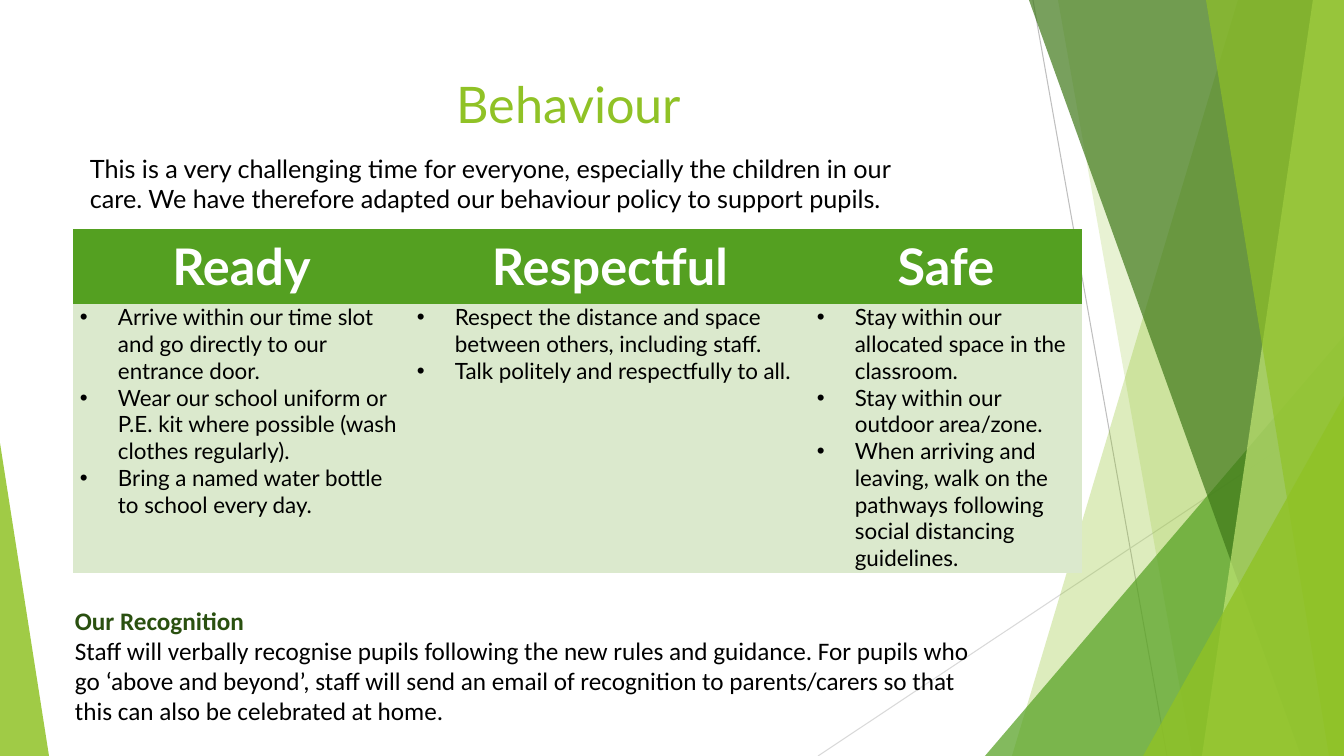
import lxml.etree
import pptx
import pptx.dml.color
import pptx.enum.shapes
import pptx.enum.text
import pptx.oxml.ns
import pptx.util

RGBColor = pptx.dml.color.RGBColor
ALIGN = pptx.enum.text.PP_ALIGN
ANCHOR = pptx.enum.text.MSO_ANCHOR
qn = pptx.oxml.ns.qn

SCALE = 914400 / 100.8
WIDTH, HEIGHT = 1344, 756
LIME = RGBColor(0x90, 0xC2, 0x26)
GREEN = RGBColor(0x54, 0xA0, 0x21)
FOREST = RGBColor(0x3F, 0x78, 0x19)
PALE_LIME = RGBColor(0xC0, 0xE4, 0x74)
DARK_GREEN = RGBColor(0x2A, 0x50, 0x10)
PALE_GREEN = RGBColor(0xDB, 0xE9, 0xCD)
GREY = RGBColor(0xBF, 0xBF, 0xBF)
LIGHT_GREY = RGBColor(0xD9, 0xD9, 0xD9)
BLACK = RGBColor(0, 0, 0)
WHITE = RGBColor(0xFF, 0xFF, 0xFF)
NO_STYLE_NO_GRID = "{2D5ABB26-0587-4C30-8999-92F81FD0307C}"

RULES = [
    ("Ready", 337, [
        "Arrive within our time slot and go directly to our entrance door.",
        "Wear our school uniform or P.E. kit where possible (wash clothes regularly).",
        "Bring a named water bottle to school every day."]),
    ("Respectful", 400, [
        "Respect the distance and space between others, including staff.",
        "Talk politely and respectfully to all."]),
    ("Safe", 272, [
        "Stay within our allocated space in the classroom.",
        "Stay within our outdoor area/zone.",
        "When arriving and leaving, walk on the pathways following social distancing guidelines."]),
]


def px(length):
    """Turn a length in px into EMU."""
    return pptx.util.Emu(round(length * SCALE))


def paint(facet, color, opacity):
    """Give a facet a translucent fill without line or shadow."""
    facet.shadow.inherit = False
    facet.line.fill.background()
    facet.fill.solid()
    facet.fill.fore_color.rgb = color
    tint = facet._element.spPr.find(qn("a:solidFill"))[0]
    lxml.etree.SubElement(tint, qn("a:alpha"), val=str(opacity * 1000))


def add_hairline(slide, start, end, color):
    """Draw a thin straight line."""
    hairline = slide.shapes.add_connector(
        pptx.enum.shapes.MSO_CONNECTOR.STRAIGHT, *map(px, start + end))
    hairline.line.color.rgb = color
    hairline.line.width = pptx.util.Pt(0.75)
    lxml.etree.SubElement(hairline._element.spPr, qn("a:effectLst"))


def add_band(slide, top_x, bottom_x, color, opacity):
    """Draw a full-height band from a slanted edge to the right of the slide."""
    outline = slide.shapes.build_freeform(top_x, 0, scale=SCALE)
    outline.add_line_segments([(WIDTH, 0), (WIDTH, HEIGHT), (bottom_x, HEIGHT)])
    paint(outline.convert_to_shape(), color, opacity)


def add_corner(slide, left, top, width, apex, color, opacity):
    """Draw a triangle that stands on the bottom edge of the slide."""
    corner = slide.shapes.add_shape(
        pptx.enum.shapes.MSO_SHAPE.ISOSCELES_TRIANGLE,
        px(left), px(top), px(width), px(HEIGHT - top))
    corner.adjustments[0] = apex
    paint(corner, color, opacity)


def add_backdrop(slide):
    """Draw the green facets from back to front."""
    add_hairline(slide, (1033, 0), (1167, HEIGHT), GREY)
    add_hairline(slide, (WIDTH, 406), (818, HEIGHT), LIGHT_GREY)
    add_band(slide, 1238, 1012, LIME, 30)
    add_band(slide, 1058, 1192, LIME, 20)
    add_corner(slide, 985, 336, 359, 1, GREEN, 72)
    add_band(slide, 1029, 1301, FOREST, 70)
    add_band(slide, 1313, 1202, PALE_LIME, 70)
    add_band(slide, 1206, 1329, LIME, 65)
    add_corner(slide, 1143, 396, 201, 1, LIME, 80)
    add_corner(slide, 0, 443, 49, 0, LIME, 85)


def add_run(paragraph, text, size, color, font="Lato", bold=False):
    """Append a styled run to a paragraph."""
    run = paragraph.add_run()
    run.text = text
    run.font.size = pptx.util.Pt(size)
    run.font.name = font
    run.font.bold = bold
    run.font.color.rgb = color


def add_text_frame(slide, box, anchor=ANCHOR.TOP):
    """Add a wrapping text box and return its frame."""
    frame = slide.shapes.add_textbox(*map(px, box)).text_frame
    frame.word_wrap = True
    frame.vertical_anchor = anchor
    return frame


def add_title(slide, box):
    """Place the centred title."""
    heading = add_text_frame(slide, box).paragraphs[0]
    heading.alignment = ALIGN.CENTER
    add_run(heading, "Behaviour", 36, LIME)


def add_intro(slide, box):
    """Place the introduction."""
    intro = add_text_frame(slide, box).paragraphs[0]
    add_run(intro, "This is a very challenging time for everyone, especially the children in our "
            "care. We have therefore adapted our behaviour policy to support pupils.", 18, BLACK)


def style_cell(cell, color, top):
    """Set the fill and insets of a table cell."""
    cell.fill.solid()
    cell.fill.fore_color.rgb = color
    cell.margin_left = cell.margin_right = px(7)
    cell.margin_top, cell.margin_bottom = px(top), 0


def add_bullet(paragraph, text):
    """Fill a paragraph as a bullet with a hanging indent."""
    properties = paragraph._p.get_or_add_pPr()
    properties.set("marL", str(px(38)))
    properties.set("indent", str(-px(38)))
    lxml.etree.SubElement(properties, qn("a:buFont"), typeface="Arial")
    lxml.etree.SubElement(properties, qn("a:buChar"), char="•")
    add_run(paragraph, text, 16, BLACK)


def add_rules(slide, left, top, header_height, body_height):
    """Place the table of rules, one column per value."""
    total = sum(width for _, width, _ in RULES)
    grid = slide.shapes.add_table(
        2, len(RULES), px(left), px(top), px(total), px(header_height + body_height))
    next(grid._element.iter(qn("a:tableStyleId"))).text = NO_STYLE_NO_GRID
    table = grid.table
    table.rows[0].height, table.rows[1].height = px(header_height), px(body_height)
    for column, (value, width, rules) in enumerate(RULES):
        table.columns[column].width = px(width)
        header, body = table.cell(0, column), table.cell(1, column)
        style_cell(header, GREEN, 3)
        style_cell(body, PALE_GREEN, 0)
        heading = header.text_frame.paragraphs[0]
        heading.alignment = ALIGN.CENTER
        heading.line_spacing = 1.07
        add_run(heading, value, 36, WHITE, bold=True)
        for index, rule in enumerate(rules):
            frame = body.text_frame
            add_bullet(frame.add_paragraph() if index else frame.paragraphs[0], rule)


def add_recognition(slide, box):
    """Place the note on recognition."""
    frame = add_text_frame(slide, box, ANCHOR.BOTTOM)
    frame.margin_top, frame.margin_bottom = px(3), 0
    add_run(frame.paragraphs[0], "Our Recognition", 18, DARK_GREEN, "Calibri", True)
    add_run(frame.add_paragraph(), "Staff will verbally recognise pupils following the new rules "
            "and guidance. For pupils who go ‘above and beyond’, staff will send an email of "
            "recognition to parents/carers so that this can also be celebrated at home.",
            18, BLACK, "Calibri")


def main():
    """Build and save the slide."""
    deck = pptx.Presentation()
    deck.slide_width, deck.slide_height = px(WIDTH), px(HEIGHT)
    slide = deck.slides.add_slide(deck.slide_layouts[6])
    add_backdrop(slide)
    add_title(slide, (95, 68, 948, 145))
    add_intro(slide, (80, 148, 862, 102))
    add_rules(slide, 73, 229, 75, 269)
    add_recognition(slide, (65, 571, 916, 155))
    deck.save("out.pptx")


if __name__ == "__main__":
    main()
